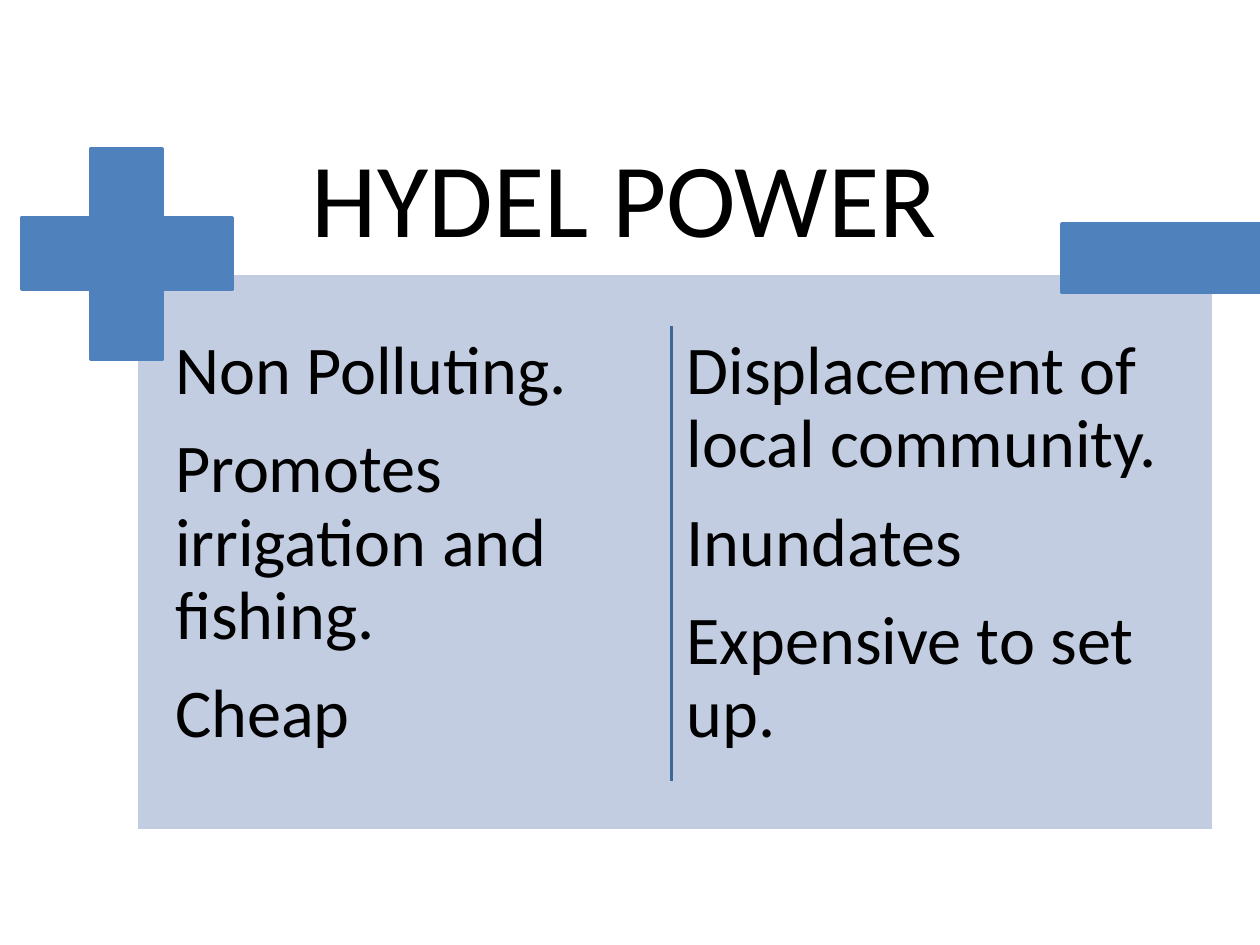
from pptx import Presentation
from pptx.dml.color import RGBColor
from pptx.enum.shapes import MSO_CONNECTOR, MSO_SHAPE
from pptx.enum.text import MSO_ANCHOR, PP_ALIGN
from pptx.oxml.ns import qn
from pptx.util import Inches, Pt
from lxml import etree

RECTANGLE = MSO_SHAPE.RECTANGLE
CROSS = MSO_SHAPE.CROSS
STRAIGHT = MSO_CONNECTOR.STRAIGHT
TOP = MSO_ANCHOR.TOP
LEFT = PP_ALIGN.LEFT
CENTER = PP_ALIGN.CENTER

FONT = "Calibri"
BLACK, WHITE = "000000", "FFFFFF"
PANEL, SIGN, DIVIDER = "C2CDE1", "4F81BD", "3F6797"

PROS = ["Non Polluting.", "Promotes irrigation and fishing.", "Cheap"]
CONS = ["Displacement of local community.", "Inundates", "Expensive to set up."]


def color(value):
    return RGBColor.from_string(value)


def add_block(slide, kind, box, fill, outline):
    block = slide.shapes.add_shape(kind, *map(Inches, box))
    block.shadow.inherit = False
    block.fill.solid()
    block.fill.fore_color.rgb = color(fill)
    block.line.color.rgb = color(outline)
    block.line.width = Pt(2)
    return block


def add_divider(slide, x, top, bottom):
    divider = slide.shapes.add_connector(
        STRAIGHT, Inches(x), Inches(top), Inches(x), Inches(bottom))
    divider.line.color.rgb = color(DIVIDER)
    divider.line.width = Pt(2)
    etree.SubElement(divider._element.spPr, qn("a:effectLst"))


def add_text(slide, box, lines, size, align=LEFT, spacing=1.0, after=0, inset=None):
    frame = slide.shapes.add_textbox(*map(Inches, box)).text_frame
    frame.word_wrap = True
    frame.vertical_anchor = TOP
    if inset is not None:
        frame.margin_left = frame.margin_right = Inches(inset)
        frame.margin_top = frame.margin_bottom = Inches(inset)
    for index, line in enumerate(lines):
        paragraph = frame.add_paragraph() if index else frame.paragraphs[0]
        paragraph.alignment = align
        paragraph.line_spacing = spacing
        paragraph.space_after = Pt(after)
        run = paragraph.add_run()
        run.text = line
        run.font.name = FONT
        run.font.size = Pt(size)
        run.font.color.rgb = color(BLACK)


def main():
    prs = Presentation()
    prs.slide_width, prs.slide_height = Inches(10), Inches(7.5)
    slide = prs.slides.add_slide(prs.slide_layouts[6])

    # Panel with the advantages and disadvantages
    add_block(slide, RECTANGLE, (1.08, 2.17, 8.55, 4.42), PANEL, WHITE)
    for left, points in ((1.31, PROS), (5.37, CONS)):
        add_text(slide, (left, 2.58, 3.97, 3.78), points, 39,
                 spacing=0.9, after=14, inset=0.08)

    # Plus and minus signs
    plus = add_block(slide, CROSS, (0.17, 1.18, 1.67, 1.67), SIGN, SIGN)
    plus.adjustments[0] = 0.33
    add_block(slide, RECTANGLE, (8.43, 1.78, 1.57, 0.54), SIGN, SIGN)

    add_divider(slide, 5.33, 2.59, 6.2)

    # Title
    add_text(slide, (1.83, 1, 6.25, 1.11), ["HYDEL POWER"], 60, align=CENTER)

    prs.save("out.pptx")


if __name__ == "__main__":
    main()
